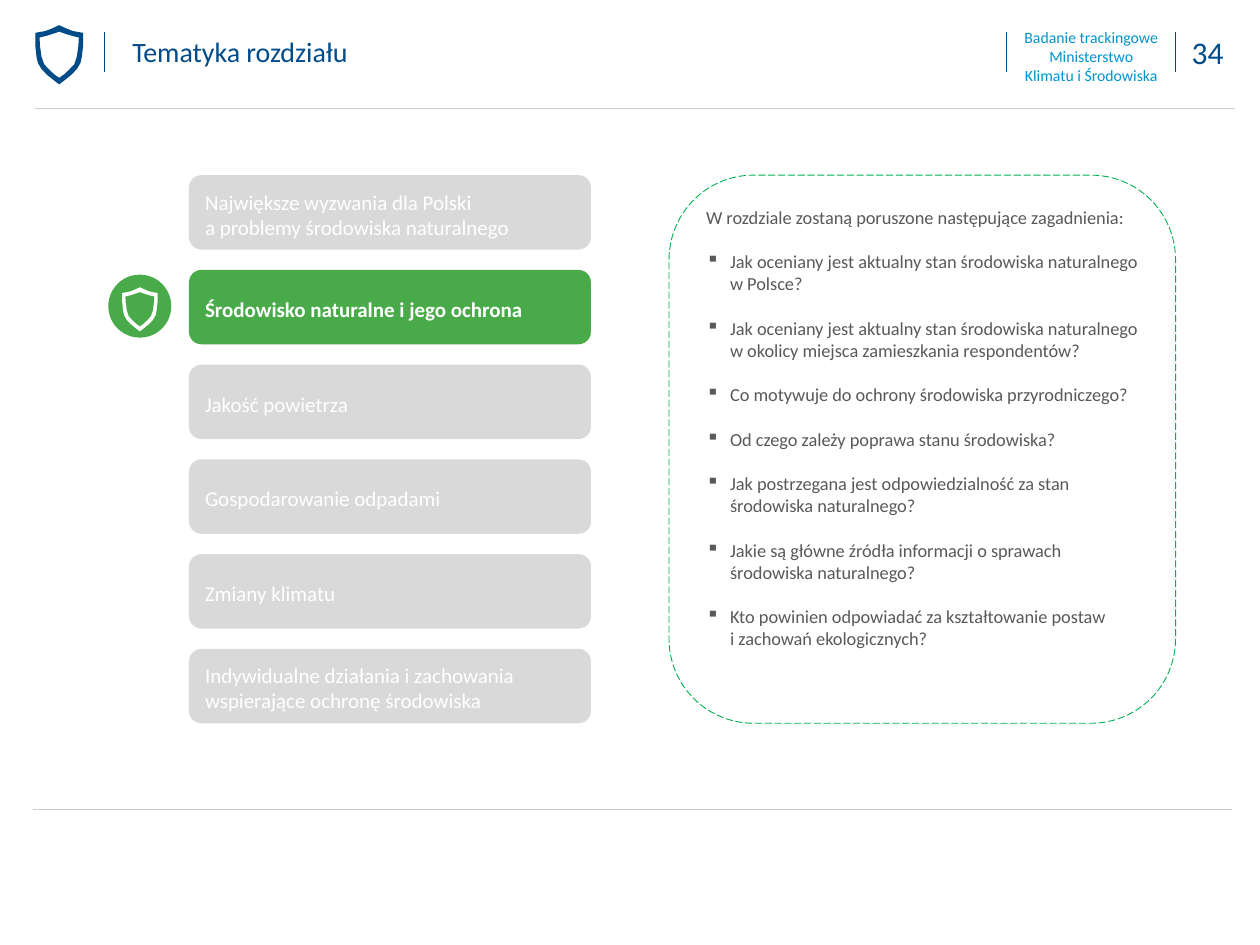
"""Build the chapter overview slide with topic steps and a list of questions."""
from dataclasses import dataclass

from lxml import etree
from pptx import Presentation
from pptx import util as u
from pptx.dml.color import RGBColor
from pptx.enum import dml, shapes, text
from pptx.oxml.ns import qn


@dataclass(frozen=True)
class Theme:
    font: str = "Calibri"
    navy: str = "004B88"
    blue: str = "0094CF"
    green: str = "48AA48"
    outline: str = "00B050"
    grey: str = "D9D9D9"
    rule: str = "CBCBCB"
    body: str = "595959"
    white: str = "FFFFFF"
    number_size: float = 18
    title_size: float = 16
    step_size: float = 12
    body_size: float = 10.5
    label_size: float = 9


@dataclass(frozen=True)
class Box:
    x: float
    y: float
    w: float
    h: float

    def lengths(self) -> list:
        return [u.Inches(v) for v in (self.x, self.y, self.w, self.h)]


@dataclass(frozen=True)
class Rule:
    x1: float
    y1: float
    x2: float
    y2: float
    color: str


@dataclass(frozen=True)
class Label:
    box: Box
    text: str
    size: float
    color: str
    align: text.PP_ALIGN = text.PP_ALIGN.CENTER
    anchor: text.MSO_ANCHOR = text.MSO_ANCHOR.TOP
    left: float = 0.1


@dataclass(frozen=True)
class Step:
    text: str
    active: bool = False


T = Theme()
RULES = [
    *(Rule(x, 0.25, x, 0.57, T.navy) for x in (0.83, 7.99, 9.33)),
    Rule(0.28, 0.86, 9.8, 0.86, T.rule),
    Rule(0.26, 6.42, 9.78, 6.42, T.rule),
]
LABELS = [
    Label(Box(9.25, 0.21, 0.67, 0.4), "34", T.number_size, T.navy),
    Label(Box(7.94, 0.17, 1.44, 0.56),
          "Badanie trackingowe\nMinisterstwo\nKlimatu i Środowiska", T.label_size, T.blue),
    Label(Box(0.83, 0.2, 7.17, 0.41), "Tematyka rozdziału", T.title_size, T.navy,
          text.PP_ALIGN.LEFT, text.MSO_ANCHOR.MIDDLE, 0.22),
]
STEPS = [
    Step("Największe wyzwania dla Polski\na problemy środowiska naturalnego"),
    Step("Środowisko naturalne i jego ochrona", True),
    Step("Jakość powietrza"),
    Step("Gospodarowanie odpadami"),
    Step("Zmiany klimatu"),
    Step("Indywidualne działania i zachowania wspierające ochronę środowiska"),
]
STEP_TOP, STEP_PITCH = 1.39, (5.15 - 1.39) / 5
INTRO = "W rozdziale zostaną poruszone następujące zagadnienia:"
QUESTIONS = [
    "Jak oceniany jest aktualny stan środowiska naturalnego w Polsce?",
    "Jak oceniany jest aktualny stan środowiska naturalnego w okolicy miejsca zamieszkania respondentów?",
    "Co motywuje do ochrony środowiska przyrodniczego?",
    "Od czego zależy poprawa stanu środowiska?",
    "Jak postrzegana jest odpowiedzialność za stan środowiska naturalnego?",
    "Jakie są główne źródła informacji o sprawach środowiska naturalnego?",
    "Kto powinien odpowiadać za kształtowanie postaw\vi zachowań ekologicznych?",
]
SHIELD_OUTER = [(0, 0), (0.32, 0.06), (0.58, 0.1), (1, 0.13), (1, 0.34), (0.95, 0.53),
                (0.89, 0.64), (0.74, 0.74), (0.53, 0.83), (0.26, 0.92), (0, 1)]
SHIELD_INNER = [(0, 0.11), (0.21, 0.14), (0.53, 0.18), (0.82, 0.21), (0.8, 0.36), (0.74, 0.53),
                (0.63, 0.66), (0.42, 0.75), (0.21, 0.83), (0, 0.89)]


def style(p, size: float, color: str, align: text.PP_ALIGN, bold: bool = False) -> None:
    p.alignment = align
    for r in p.runs:
        r.font.name, r.font.size, r.font.bold = T.font, u.Pt(size), bold
        r.font.color.rgb = RGBColor.from_string(color)


def paint(sp, color: str) -> None:
    sp.shadow.inherit = False
    sp.fill.solid()
    sp.fill.fore_color.rgb = RGBColor.from_string(color)
    sp.line.fill.background()


def add_rule(s, rule: Rule) -> None:
    ends = [u.Inches(v) for v in (rule.x1, rule.y1, rule.x2, rule.y2)]
    line = s.shapes.add_connector(shapes.MSO_CONNECTOR.STRAIGHT, *ends)
    line.line.color.rgb = RGBColor.from_string(rule.color)
    line.line.width = u.Pt(0.25)
    etree.SubElement(line._element.spPr, qn("a:effectLst"))


def add_label(s, label: Label) -> None:
    tf = s.shapes.add_textbox(*label.box.lengths()).text_frame
    tf.word_wrap = True
    tf.vertical_anchor = label.anchor
    tf.margin_left = u.Inches(label.left)
    tf.text = label.text
    for p in tf.paragraphs:
        style(p, label.size, label.color, label.align)


def add_step(s, step: Step, top: float) -> None:
    sp = s.shapes.add_shape(shapes.MSO_SHAPE.ROUNDED_RECTANGLE, *Box(1.5, top, 3.19, 0.59).lengths())
    paint(sp, T.green if step.active else T.grey)
    tf = sp.text_frame
    tf.word_wrap = True
    tf.vertical_anchor = text.MSO_ANCHOR.MIDDLE
    tf.margin_top = u.Inches(0.08)
    tf.text = step.text
    for p in tf.paragraphs:
        style(p, T.step_size, T.white, text.PP_ALIGN.LEFT, step.active)


def add_shield(s, box: Box, color: str) -> None:
    def contour(half: list) -> list:
        loop = half + [(-x, y) for x, y in reversed(half[1:-1])]
        return [(u.Inches(box.x + box.w * (1 + x) / 2), u.Inches(box.y + box.h * y)) for x, y in loop]

    outer, inner = contour(SHIELD_OUTER), contour(SHIELD_INNER)
    builder = s.shapes.build_freeform(*outer[0])
    builder.add_line_segments(outer[1:], close=True)
    builder.move_to(*inner[0])
    builder.add_line_segments(inner[1:], close=True)
    paint(builder.convert_to_shape(), color)


def add_bullet(p, indent: float) -> None:
    pr = p._p.get_or_add_pPr()
    pr.set("marL", str(u.Inches(indent)))
    pr.set("indent", str(-u.Inches(indent)))
    etree.SubElement(pr, qn("a:buChar")).set("char", "▪")


def add_questions(s, box: Box) -> None:
    sp = s.shapes.add_shape(shapes.MSO_SHAPE.ROUNDED_RECTANGLE, *box.lengths())
    sp.shadow.inherit = False
    sp.fill.background()
    sp.line.color.rgb = RGBColor.from_string(T.outline)
    sp.line.width = u.Pt(0.5)
    sp.line.dash_style = dml.MSO_LINE.LONG_DASH
    tf = sp.text_frame
    tf.word_wrap = True
    tf.vertical_anchor = text.MSO_ANCHOR.TOP
    tf.text = INTRO
    style(tf.paragraphs[0], T.body_size, T.body, text.PP_ALIGN.JUSTIFY)
    for question in QUESTIONS:
        p = tf.add_paragraph()
        p.text = question
        add_bullet(p, 0.19)
        p.space_before = u.Pt(12.8)
        style(p, T.body_size, T.body, text.PP_ALIGN.LEFT)


def main() -> None:
    prs = Presentation()
    prs.slide_width, prs.slide_height = u.Inches(10), u.Inches(7.5)
    s = prs.slides.add_slide(prs.slide_layouts[6])
    for rule in RULES:
        add_rule(s, rule)
    for label in LABELS:
        add_label(s, label)
    for i, step in enumerate(STEPS):
        add_step(s, step, STEP_TOP + i * STEP_PITCH)
    paint(s.shapes.add_shape(shapes.MSO_SHAPE.OVAL, *Box(0.86, 2.18, 0.5, 0.5).lengths()), T.green)
    add_questions(s, Box(5.31, 1.39, 4.02, 4.35))
    add_shield(s, Box(0.28, 0.2, 0.38, 0.47), T.navy)
    add_shield(s, Box(0.97, 2.28, 0.28, 0.35), T.white)
    prs.save("out.pptx")


if __name__ == "__main__":
    main()
